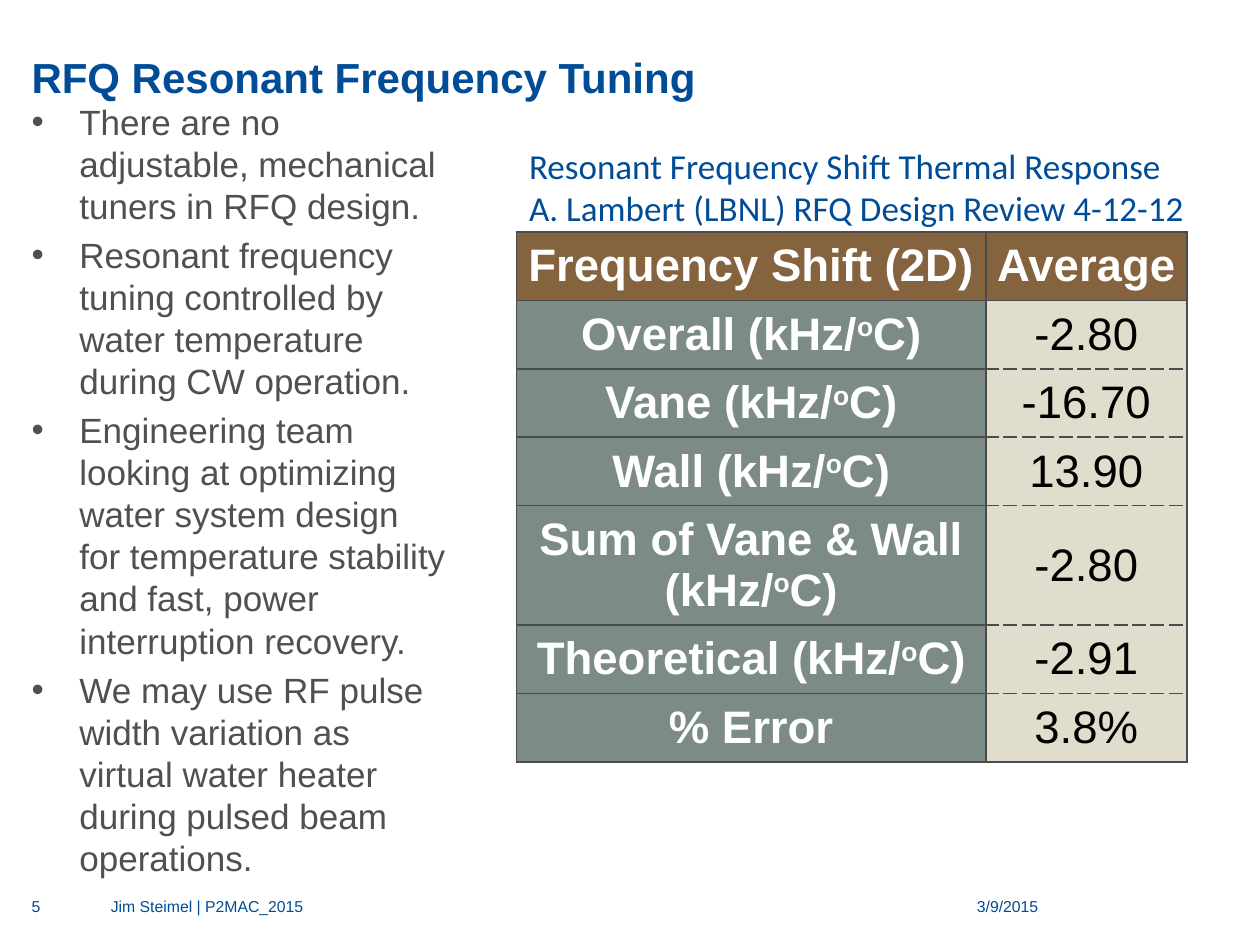
from lxml import etree
from pptx import Presentation
from pptx import util as u
from pptx.dml.color import RGBColor
from pptx.enum import text
from pptx.oxml.ns import qn

Inches, Pt = u.Inches, u.Pt
BLUE, GREY, LINE = "004C97", "505050", "4B4B4B"
BROWN, SLATE, CREAM = "84633E", "7D8B87", "E0DDCD"
WHITE, BLACK = "FFFFFF", "000000"

BULLETS = [
    "There are no adjustable, mechanical tuners in RFQ design.",
    "Resonant frequency tuning controlled by water temperature during CW operation.",
    "Engineering team looking at optimizing water system design for temperature "
    "stability and fast, power interruption recovery.",
    "We may use RF pulse width variation as virtual water heater during pulsed "
    "beam operations.",
]
CAPTION = ["Resonant Frequency Shift Thermal Response",
           "A. Lambert (LBNL) RFQ Design Review 4-12-12"]
SHIFTS = [
    ("Frequency Shift (2D)", "Average"),
    ("Overall (kHz/^C)", "-2.80"),
    ("Vane (kHz/^C)", "-16.70"),
    ("Wall (kHz/^C)", "13.90"),
    ("Sum of Vane & Wall (kHz/^C)", "-2.80"),
    ("Theoretical (kHz/^C)", "-2.91"),
    ("% Error", "3.8%"),
]


def colour(value):
    return RGBColor.from_string(value)


def add_span(para, words, size, tint, bold=False, face="Arial"):
    span = para.add_run()
    span.text = words
    span.font.name, span.font.size, span.font.bold = face, Pt(size), bold
    span.font.color.rgb = colour(tint)
    return span


def place(shape, box):
    shape.left, shape.top, shape.width, shape.height = map(Inches, box)


def set_frame(frame, anchor=text.MSO_ANCHOR.TOP):
    """Make a wrapping frame with no insets and no automatic sizing."""
    frame.margin_left = frame.margin_right = frame.margin_top = frame.margin_bottom = 0
    frame.word_wrap = True
    frame.auto_size = text.MSO_AUTO_SIZE.NONE
    frame.vertical_anchor = anchor


def add_bullet(para):
    props = para._p.get_or_add_pPr()
    props.set("marL", str(Inches(0.38)))
    props.set("indent", str(-Inches(0.38)))
    etree.SubElement(props, qn("a:buFont"), typeface="Arial")
    etree.SubElement(props, qn("a:buChar"), char="•")


def fill_title(title, box):
    place(title, box)
    set_frame(title.text_frame, text.MSO_ANCHOR.BOTTOM)
    para = title.text_frame.paragraphs[0]
    para.alignment = text.PP_ALIGN.LEFT
    add_span(para, "RFQ Resonant Frequency Tuning", 24, BLUE, True)


def fill_body(body, box):
    place(body, box)
    frame = body.text_frame
    set_frame(frame)
    for index, words in enumerate(BULLETS):
        para = frame.add_paragraph() if index else frame.paragraphs[0]
        add_bullet(para)
        para.space_before = Pt(4 if index else 0)
        para.line_spacing = Pt(24)
        add_span(para, words, 20, GREY)


def add_caption(page, box):
    frame = page.shapes.add_textbox(*map(Inches, box)).text_frame
    frame.word_wrap = False
    frame.auto_size = text.MSO_AUTO_SIZE.SHAPE_TO_FIT_TEXT
    for index, words in enumerate(CAPTION):
        para = frame.add_paragraph() if index else frame.paragraphs[0]
        add_span(para, words, 20, BLUE, face="Calibri")


def add_borders(cell, dashed):
    """Draw all four sides, with the sides named in dashed (L, R, T, B) broken."""
    props = cell._tc.get_or_add_tcPr()
    for side in "LRTB":
        line = etree.SubElement(props, qn(f"a:ln{side}"), w=str(Pt(1)))
        fill = etree.SubElement(line, qn("a:solidFill"))
        etree.SubElement(fill, qn("a:srgbClr"), val=LINE)
        etree.SubElement(line, qn("a:prstDash"), val="dash" if side in dashed else "solid")


def fill_cell(cell, words, fill, tint, bold, dashed=""):
    """Write a centred cell; ^ in words stands for a raised degree letter."""
    add_borders(cell, dashed)
    cell.fill.solid()
    cell.fill.fore_color.rgb = colour(fill)
    cell.vertical_anchor = text.MSO_ANCHOR.MIDDLE
    cell.margin_left = cell.margin_right = Inches(0.07)
    cell.margin_top = cell.margin_bottom = Inches(0.07)
    para = cell.text_frame.paragraphs[0]
    para.alignment = text.PP_ALIGN.CENTER
    before, degree, after = words.partition("^")
    add_span(para, before, 26, tint, bold)
    if degree:
        raised = add_span(para, "o", 26, tint, bold)
        raised._r.get_or_add_rPr().set("baseline", "30000")
        add_span(para, after, 26, tint, bold)


def add_shift_table(page, box):
    table = page.shapes.add_table(len(SHIFTS), 2, *map(Inches, box)).table
    table.horz_banding = False
    for column, width in zip(table.columns, (0.7 * box[2], 0.3 * box[2])):
        column.width = Inches(width)
    last = len(SHIFTS) - 1
    for index, (label, value) in enumerate(SHIFTS):
        table.rows[index].height = Inches(0.48)
        name_cell, value_cell = table.cell(index, 0), table.cell(index, 1)
        if index == 0:
            fill_cell(name_cell, label, BROWN, WHITE, True)
            fill_cell(value_cell, value, BROWN, WHITE, True)
            continue
        dashed = ("T" if index > 1 else "") + ("B" if index < last else "")
        fill_cell(name_cell, label, SLATE, WHITE, True)
        fill_cell(value_cell, value, CREAM, BLACK, False, dashed)


def add_footer(page, box):
    left, top, _, height = box
    parts = [("5", 0, 0.49, text.PP_ALIGN.LEFT),
             ("Jim Steimel | P2MAC_2015", 0.63, 5.88, text.PP_ALIGN.LEFT),
             ("3/9/2015", 6.81, 1.18, text.PP_ALIGN.RIGHT)]
    for words, offset, width, align in parts:
        area = map(Inches, (left + offset, top, width, height))
        frame = page.shapes.add_textbox(*area).text_frame
        set_frame(frame)
        frame.paragraphs[0].alignment = align
        add_span(frame.paragraphs[0], words, 9, BLUE)


def main():
    deck = Presentation()
    deck.slide_width, deck.slide_height = Inches(10), Inches(7.5)
    page = deck.slides.add_slide(deck.slide_layouts[1])
    fill_title(page.shapes.title, (0.25, 0.11, 9.5, 0.7))
    fill_body(page.placeholders[1], (0.25, 0.8, 3.31, 6.36))
    add_footer(page, (0.25, 7.12, 7.99, 0.26))
    add_shift_table(page, (4.1, 1.84, 5.32, 4.44))
    add_caption(page, (4.1, 1.1, 5.45, 0.77))
    deck.save("out.pptx")


if __name__ == "__main__":
    main()
